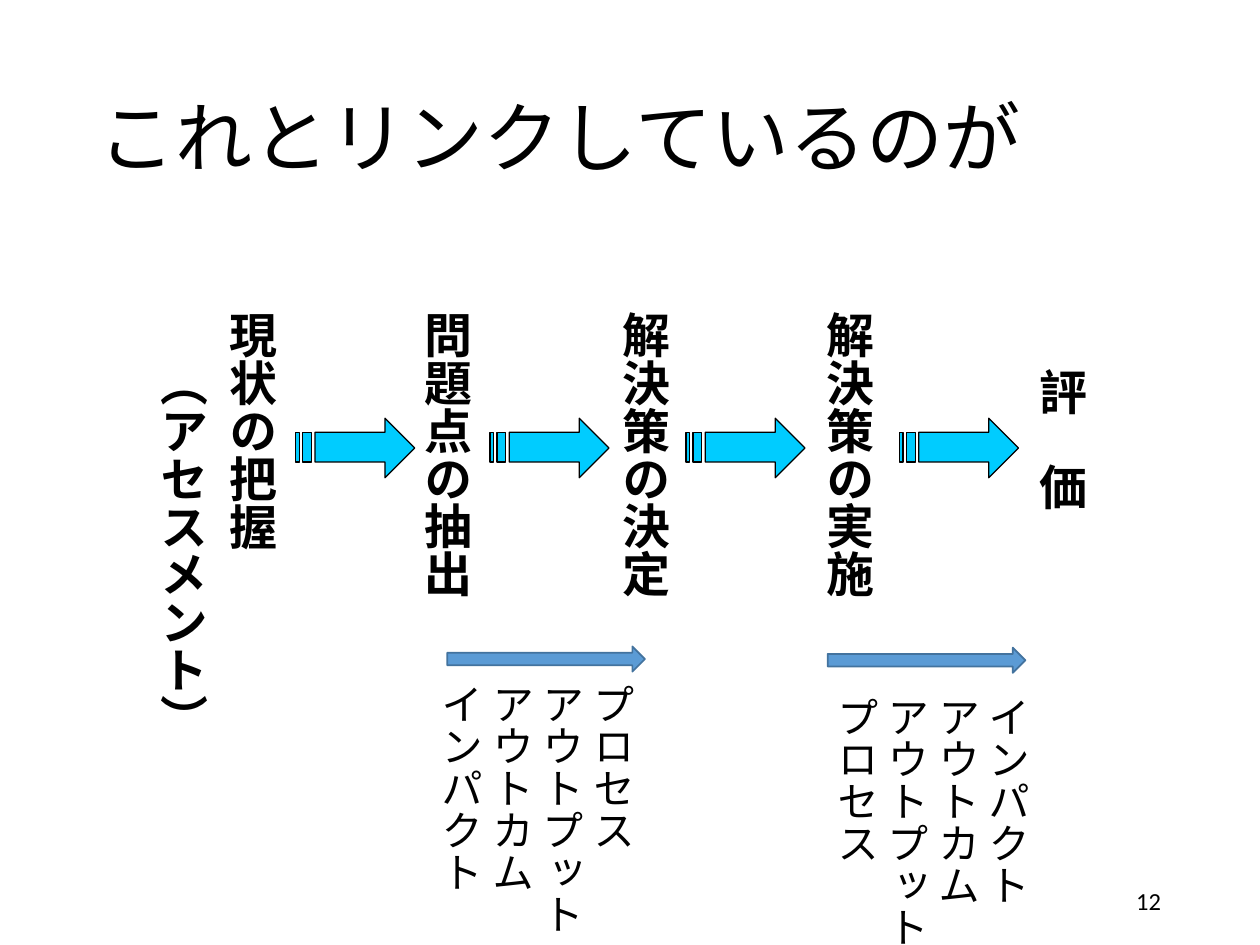
from dataclasses import dataclass

from lxml import etree
from pptx import Presentation
from pptx.dml.color import RGBColor
from pptx.enum.shapes import MSO_SHAPE
from pptx.enum.text import MSO_ANCHOR, PP_ALIGN
from pptx.oxml.ns import qn
from pptx.util import Pt


@dataclass(frozen=True)
class Theme:
    ink: RGBColor = RGBColor(0, 0, 0)
    step_arrow: RGBColor = RGBColor(0x00, 0xCC, 0xFF)
    level_arrow: RGBColor = RGBColor(0x5B, 0x9B, 0xD5)
    level_line: RGBColor = RGBColor(0x43, 0x73, 0x9E)
    body_font: str = "Calibri"
    step_font: str = "Noto Sans CJK JP"
    title_size: float = 44
    step_size: float = 27.4
    level_size: float = 24
    number_size: float = 14


THEME = Theme()


def add_text(slide, box, lines, size, font=THEME.body_font, bold=False,
             vertical=False, wrap=True, insets=(7.2, 3.6)):
    shape = slide.shapes.add_textbox(*map(Pt, box))
    frame = shape.text_frame
    frame.word_wrap = wrap
    frame.margin_left = frame.margin_right = Pt(insets[0])
    frame.margin_top = frame.margin_bottom = Pt(insets[1])
    if vertical:
        frame._txBody.bodyPr.set("vert", "eaVert")
    frame.text = "\n".join(lines)
    for paragraph in frame.paragraphs:
        for run in paragraph.runs:
            run.font.size = Pt(size)
            run.font.name = font
            run.font.bold = bold
            run.font.color.rgb = THEME.ink
            if font == THEME.step_font:
                east_asian = etree.SubElement(run.font._element, qn("a:ea"))
                east_asian.set("typeface", font)
    return frame


def paint(shape, fill, line, width):
    shape.shadow.inherit = False
    shape.fill.solid()
    shape.fill.fore_color.rgb = fill
    shape.line.color.rgb = line
    shape.line.width = Pt(width)


def add_title(slide, box):
    frame = add_text(slide, box, ["これとリンクしているのが"], THEME.title_size)
    frame.vertical_anchor = MSO_ANCHOR.MIDDLE
    frame.paragraphs[0].line_spacing = 0.9


def add_step(slide, box, lines):
    frame = add_text(slide, box, lines, THEME.step_size, THEME.step_font,
                     bold=True, vertical=True, insets=(6.5, 2.9))
    for paragraph in frame.paragraphs[1:]:
        paragraph.space_before = Pt(7)


def add_step_arrow(slide, box):
    left, top, width, height = box
    right, bottom, middle = left + width, top + height, top + height / 2
    body_top, body_bottom = top + height / 4, bottom - height / 4
    neck = right - width / 4
    tail = left + width * 5 / 32
    head = [(neck, top), (neck, body_top), (tail, body_top), (tail, body_bottom),
            (neck, body_bottom), (neck, bottom), (right, middle)]
    stripes = [
        [(left + width * start, body_top), (left + width * start, body_bottom),
         (left + width * end, body_bottom), (left + width * end, body_top)]
        for start, end in ((1 / 16, 1 / 8), (0, 1 / 32))
    ]
    builder = slide.shapes.build_freeform(*head[0], scale=Pt(1))
    builder.add_line_segments(head[1:], close=True)
    for stripe in stripes:
        builder.move_to(*stripe[0])
        builder.add_line_segments(stripe[1:], close=True)
    paint(builder.convert_to_shape(), THEME.step_arrow, THEME.ink, 0.75)


def add_process(slide, box):
    left, top, width, height = box
    add_step(slide, (left, top, 95.8, height), ["現状の把握", "　（アセスメント）"])
    steps = [
        (232.5, 0, "問題点の抽出", 169.2),
        (345.6, 0, "解決策の決定", 280.1),
        (462.2, 0, "解決策の実施", 392.2),
        (583.9, 32.4, "評　価", 514.2),
    ]
    for step_left, drop, label, arrow_left in steps:
        add_step(slide, (step_left, top + drop, 46, 185 - 2 * drop), [label])
        add_step_arrow(slide, (arrow_left, top + 63.9, 68, 34))


def add_levels(slide, box, arrow_left, labels):
    left, top, width, height = box
    arrow = slide.shapes.add_shape(
        MSO_SHAPE.RIGHT_ARROW, *map(Pt, (arrow_left, top, 113, 14.4)))
    paint(arrow, THEME.level_arrow, THEME.level_line, 1)
    text_top = top + height - 136.8
    add_text(slide, (left, text_top, width, 136.8), labels, THEME.level_size,
             vertical=True, wrap=False)


def add_slide_number(slide, box):
    frame = add_text(slide, box, ["12"], THEME.number_size)
    frame.vertical_anchor = MSO_ANCHOR.MIDDLE
    frame.paragraphs[0].alignment = PP_ALIGN.RIGHT


def main():
    presentation = Presentation()
    presentation.slide_width, presentation.slide_height = Pt(720), Pt(540)
    slide = presentation.slides.add_slide(presentation.slide_layouts[6])
    levels = ["プロセス", "アウトプット", "アウトカム", "インパクト"]
    add_title(slide, (49.5, 29, 621, 104))
    add_process(slide, (71.3, 175, 559, 264))
    add_levels(slide, (208, 369.4, 160, 151.2), 255.6, levels)
    add_levels(slide, (434, 370.1, 160, 157.7), 473, levels[::-1])
    add_slide_number(slide, (508.5, 500.5, 162, 28.8))
    presentation.save("out.pptx")


if __name__ == "__main__":
    main()
